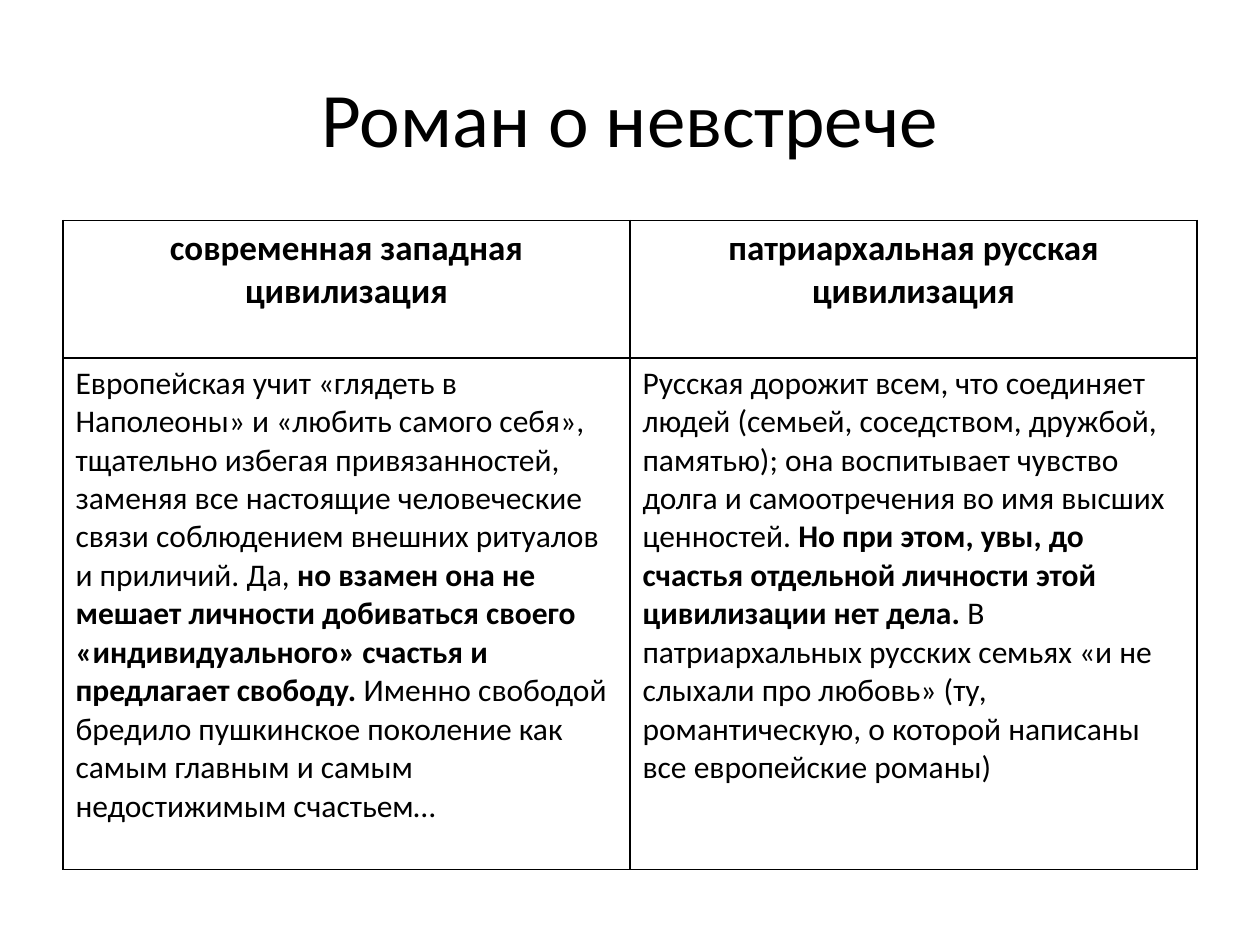
from lxml.etree import SubElement
from pptx import Presentation
from pptx.dml.color import RGBColor
from pptx.enum.text import MSO_ANCHOR as Anchor, PP_ALIGN as Align
from pptx.oxml.ns import qn
from pptx.util import Inches, Pt

COLORS = {"ink": "000000", "paper": "FFFFFF"}
FONT = "Calibri"
HEADINGS = [
    ["современная западная цивилизация"],
    ["патриархальная русская", "цивилизация"],
]
BODIES = [
    [
        ("Европейская учит «глядеть в Наполеоны» и «любить самого себя», "
         "тщательно избегая привязанностей, заменяя все настоящие человеческие "
         "связи соблюдением внешних ритуалов и приличий. Да, ", False),
        ("но взамен она не мешает личности добиваться своего "
         "«индивидуального» счастья и предлагает свободу. ", True),
        ("Именно свободой бредило пушкинское поколение как самым главным "
         "и самым недостижимым счастьем…", False),
    ],
    [
        ("Русская дорожит всем, что соединяет людей (семьей, соседством, "
         "дружбой, памятью); она воспитывает чувство долга и самоотречения "
         "во имя высших ценностей. ", False),
        ("Но при этом, увы, до счастья отдельной личности этой "
         "цивилизации нет дела. ", True),
        ("В патриархальных русских семьях «и не слыхали про любовь» (ту, "
         "романтическую, о которой написаны все европейские романы)", False),
    ],
]


def write_paragraphs(frame, paragraphs, size, align):
    """Fill a text frame with paragraphs of (text, bold) runs."""
    for index, runs in enumerate(paragraphs):
        para = frame.add_paragraph() if index else frame.paragraphs[0]
        para.alignment = align
        for text, bold in runs:
            span = para.add_run()
            span.text = text
            span.font.name = FONT
            span.font.size = Pt(size)
            span.font.bold = bold
            span.font.color.rgb = RGBColor.from_string(COLORS["ink"])


def add_title(page, text):
    """Place and fill the title placeholder."""
    title = page.shapes.title
    title.left, title.top = Inches(0.5), Inches(0.3)
    title.width, title.height = Inches(9), Inches(1.25)
    title.text_frame.vertical_anchor = Anchor.MIDDLE
    write_paragraphs(title.text_frame, [[(text, False)]], 44, Align.CENTER)


def style_cell(cell):
    """Give a cell thin borders on all sides and a plain fill."""
    properties = cell._tc.get_or_add_tcPr()
    for side in ("lnL", "lnR", "lnT", "lnB"):
        line = SubElement(properties, qn(f"a:{side}"), w=str(Pt(1)))
        fill = SubElement(line, qn("a:solidFill"))
        SubElement(fill, qn("a:srgbClr"), val=COLORS["ink"])
    cell.fill.solid()
    cell.fill.fore_color.rgb = RGBColor.from_string(COLORS["paper"])


def add_comparison(page):
    """Add the two-column table comparing the civilizations."""
    heights = [Inches(1.09), Inches(4.06)]
    frame = page.shapes.add_table(
        2, 2, Inches(0.5), Inches(1.75), Inches(9), sum(heights))
    table = frame.table
    table.horz_banding = False
    for row, height in zip(table.rows, heights):
        row.height = height
    for column, (heading, body) in enumerate(zip(HEADINGS, BODIES)):
        head_cell, body_cell = table.cell(0, column), table.cell(1, column)
        lines = [[(line, True)] for line in heading]
        write_paragraphs(head_cell.text_frame, lines, 20, Align.CENTER)
        write_paragraphs(body_cell.text_frame, [body], 18, Align.LEFT)
        style_cell(head_cell)
        style_cell(body_cell)


def main():
    """Build and save the slide."""
    deck = Presentation()
    deck.slide_width, deck.slide_height = Inches(10), Inches(7.5)
    page = deck.slides.add_slide(deck.slide_layouts[5])
    add_title(page, "Роман о невстрече")
    add_comparison(page)
    deck.save("out.pptx")


if __name__ == "__main__":
    main()
